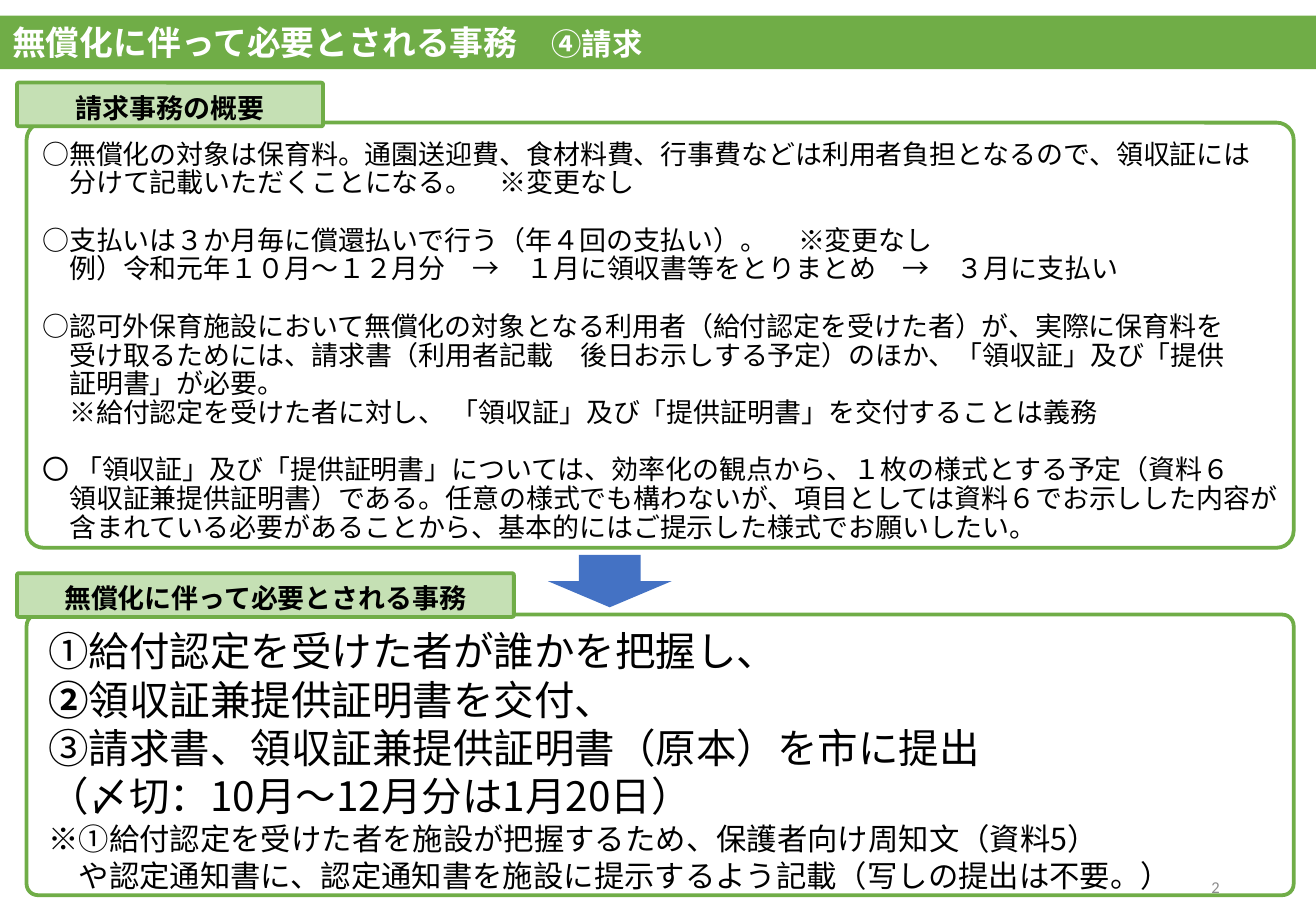
"""Build the slide on billing work for the free childcare programme."""
from dataclasses import dataclass

from lxml import etree
from pptx import Presentation
from pptx.dml.color import RGBColor
from pptx.enum.shapes import MSO_SHAPE
from pptx.enum.text import MSO_ANCHOR, MSO_AUTO_SIZE, PP_ALIGN
from pptx.oxml.ns import qn
from pptx.shapes.autoshape import Shape
from pptx.slide import Slide
from pptx.text.text import TextFrame
from pptx.util import Pt

ROUNDED = MSO_SHAPE.ROUNDED_RECTANGLE
DOWN_ARROW = MSO_SHAPE.DOWN_ARROW
MIDDLE, TOP = MSO_ANCHOR.MIDDLE, MSO_ANCHOR.TOP
LEFT, CENTER, RIGHT = PP_ALIGN.LEFT, PP_ALIGN.CENTER, PP_ALIGN.RIGHT
NO_AUTOFIT = MSO_AUTO_SIZE.NONE


@dataclass(frozen=True)
class Theme:
    green: str = "70AD47"
    pale_green: str = "C5E0B4"
    blue: str = "4472C4"
    black: str = "000000"
    white: str = "FFFFFF"
    gray: str = "8C8C8C"
    font: str = "Noto Sans CJK JP"
    number_font: str = "Calibri"
    title_size: float = 20
    subtitle_size: float = 18
    body_size: float = 16
    step_size: float = 24
    note_size: float = 18
    number_size: float = 9.8
    outline: float = 2.25
    corner: float = 0.04


THEME = Theme()


@dataclass(frozen=True)
class Box:
    left: float
    top: float
    width: float
    height: float

    def lengths(self) -> tuple[Pt, Pt, Pt, Pt]:
        return Pt(self.left), Pt(self.top), Pt(self.width), Pt(self.height)


@dataclass(frozen=True)
class Run:
    text: str
    size: float
    bold: bool = False
    color: str = THEME.black
    font: str = THEME.font


@dataclass(frozen=True)
class Line:
    runs: tuple[Run, ...]
    align: PP_ALIGN = LEFT
    spacing: float | None = None
    before: float = 0
    hanging: float = 0
    tab: float | None = None


@dataclass(frozen=True)
class Section:
    panel: Box
    label: Box
    heading: str
    text: Box
    lines: tuple[Line, ...]


def overview_line(text: str, before: float = 17, tab: float | None = None) -> Line:
    return Line((Run(text, THEME.body_size),), spacing=17, before=before,
                hanging=THEME.body_size, tab=tab)


def step_line(*runs: Run) -> Line:
    return Line(runs, spacing=28.6)


SECTIONS = (
    Section(
        Box(15.8, 72.7, 751, 252), Box(10.1, 49, 181.4, 25.9), "請求事務の概要",
        Box(18, 80, 759, 267),
        (
            overview_line("○無償化の対象は保育料。通園送迎費、食材料費、行事費などは利用者負担となるので、領収証には\v"
                          "分けて記載いただくことになる。　※変更なし", before=0),
            overview_line("○支払いは３か月毎に償還払いで行う（年４回の支払い）。\t※変更なし\v"
                          "例）令和元年１０月～１２月分　→　１月に領収書等をとりまとめ　→　３月に支払い", tab=465),
            overview_line("○認可外保育施設において無償化の対象となる利用者（給付認定を受けた者）が、実際に保育料を\v"
                          "受け取るためには、請求書（利用者記載　後日お示しする予定）のほか、「領収証」及び「提供\v"
                          "証明書」が必要。\v"
                          "※給付認定を受けた者に対し、 「領収証」及び「提供証明書」を交付することは義務"),
            overview_line("〇 「領収証」及び「提供証明書」については、効率化の観点から、１枚の様式とする予定（資料６\v"
                          "領収証兼提供証明書）である。任意の様式でも構わないが、項目としては資料６でお示しした内容が\v"
                          "含まれている必要があることから、基本的にはご提示した様式でお願いしたい。"),
        ),
    ),
    Section(
        Box(15.8, 364.3, 751, 166.3), Box(10.1, 339.8, 294.5, 25.9), "無償化に伴って必要とされる事務",
        Box(21.6, 368, 740, 167),
        (
            step_line(Run("①給付認定を受けた者が誰かを把握し、", THEME.step_size)),
            step_line(Run("②", THEME.step_size, bold=True),
                      Run("領収証兼提供証明書を交付、", THEME.step_size)),
            step_line(Run("③請求書、領収証兼提供証明書（原本）を市に提出", THEME.step_size)),
            step_line(Run("（〆切：10月～12月分は1月20日）", THEME.step_size)),
            Line((Run("※①給付認定を受けた者を施設が把握するため、保護者向け周知文（資料5）\v"
                      "や認定通知書に、認定通知書を施設に提示するよう記載（写しの提出は不要。）",
                      THEME.note_size),), spacing=22, hanging=THEME.note_size),
        ),
    ),
)


def apply(target: object, values: dict[str, object]) -> None:
    for name, value in values.items():
        setattr(target, name, value)


def write(frame: TextFrame, lines: tuple[Line, ...], anchor: MSO_ANCHOR = TOP) -> None:
    apply(frame, {
        "word_wrap": True, "auto_size": NO_AUTOFIT, "vertical_anchor": anchor,
        "margin_left": Pt(7.2), "margin_right": Pt(7.2),
        "margin_top": Pt(3.6), "margin_bottom": Pt(3.6),
    })
    for index, line in enumerate(lines):
        paragraph = frame.add_paragraph() if index else frame.paragraphs[0]
        apply(paragraph, {
            "alignment": line.align, "space_before": Pt(line.before), "space_after": Pt(0),
            "line_spacing": Pt(line.spacing) if line.spacing else 1.0,
        })
        properties = paragraph._p.get_or_add_pPr()
        properties.set("marL", str(Pt(line.hanging)))
        properties.set("indent", str(-Pt(line.hanging)))
        if line.tab:
            tabs = etree.SubElement(properties, qn("a:tabLst"))
            etree.SubElement(tabs, qn("a:tab"), pos=str(Pt(line.tab)), algn="l")
        for item in line.runs:
            for part, text in enumerate(item.text.split("\v")):
                if part:
                    paragraph.add_line_break()
                run = paragraph.add_run()
                run.text = text
                apply(run.font, {"size": Pt(item.size), "bold": item.bold, "name": item.font})
                run.font.color.rgb = RGBColor.from_string(item.color)
                etree.SubElement(run.font._element, qn("a:ea"), typeface=item.font)


def paint(shape: Shape, fill: str | None, outline: str | None = None) -> None:
    if fill:
        shape.fill.solid()
        shape.fill.fore_color.rgb = RGBColor.from_string(fill)
    else:
        shape.fill.background()
    if outline:
        shape.line.color.rgb = RGBColor.from_string(outline)
        shape.line.width = Pt(THEME.outline)
    else:
        shape.line.fill.background()


def add_figure(slide: Slide, kind: MSO_SHAPE, box: Box, fill: str | None,
               outline: str | None = None) -> Shape:
    shape = slide.shapes.add_shape(kind, *box.lengths())
    shape.shadow.inherit = False
    paint(shape, fill, outline)
    if kind == ROUNDED:
        shape.adjustments[0] = THEME.corner
    return shape


def add_text(slide: Slide, box: Box, lines: tuple[Line, ...], anchor: MSO_ANCHOR = TOP) -> None:
    write(slide.shapes.add_textbox(*box.lengths()).text_frame, lines, anchor)


def add_section(slide: Slide, section: Section) -> None:
    add_figure(slide, ROUNDED, section.panel, None, THEME.green)
    add_text(slide, section.text, section.lines)
    label = add_figure(slide, ROUNDED, section.label, THEME.pale_green, THEME.green)
    heading = Run(section.heading, THEME.body_size, bold=True)
    write(label.text_frame, (Line((heading,), align=CENTER),), MIDDLE)
    label.text_frame.margin_top = Pt(7.2)


def add_title(slide: Slide) -> None:
    title = slide.shapes.title
    apply(title, dict(zip(("left", "top", "width", "height"), Box(0, 9.2, 780, 31.8).lengths())))
    paint(title, THEME.green)
    write(title.text_frame, (Line((
        Run("無償化に伴って必要とされる事務　", THEME.title_size, True, THEME.white),
        Run("④請求", THEME.subtitle_size, True, THEME.white),
    )),), MIDDLE)


def main() -> None:
    presentation = Presentation()
    apply(presentation, {"slide_width": Pt(780), "slide_height": Pt(540)})
    slide = presentation.slides.add_slide(presentation.slide_layouts[5])
    add_title(slide)
    number = Run("2", THEME.number_size, color=THEME.gray, font=THEME.number_font)
    add_text(slide, Box(554.4, 511.2, 175.7, 28.8), (Line((number,), align=RIGHT),), MIDDLE)
    for section in SECTIONS:
        add_section(slide, section)
    add_figure(slide, DOWN_ARROW, Box(324.7, 329, 73.4, 31), THEME.blue)
    presentation.save("out.pptx")


if __name__ == "__main__":
    main()
